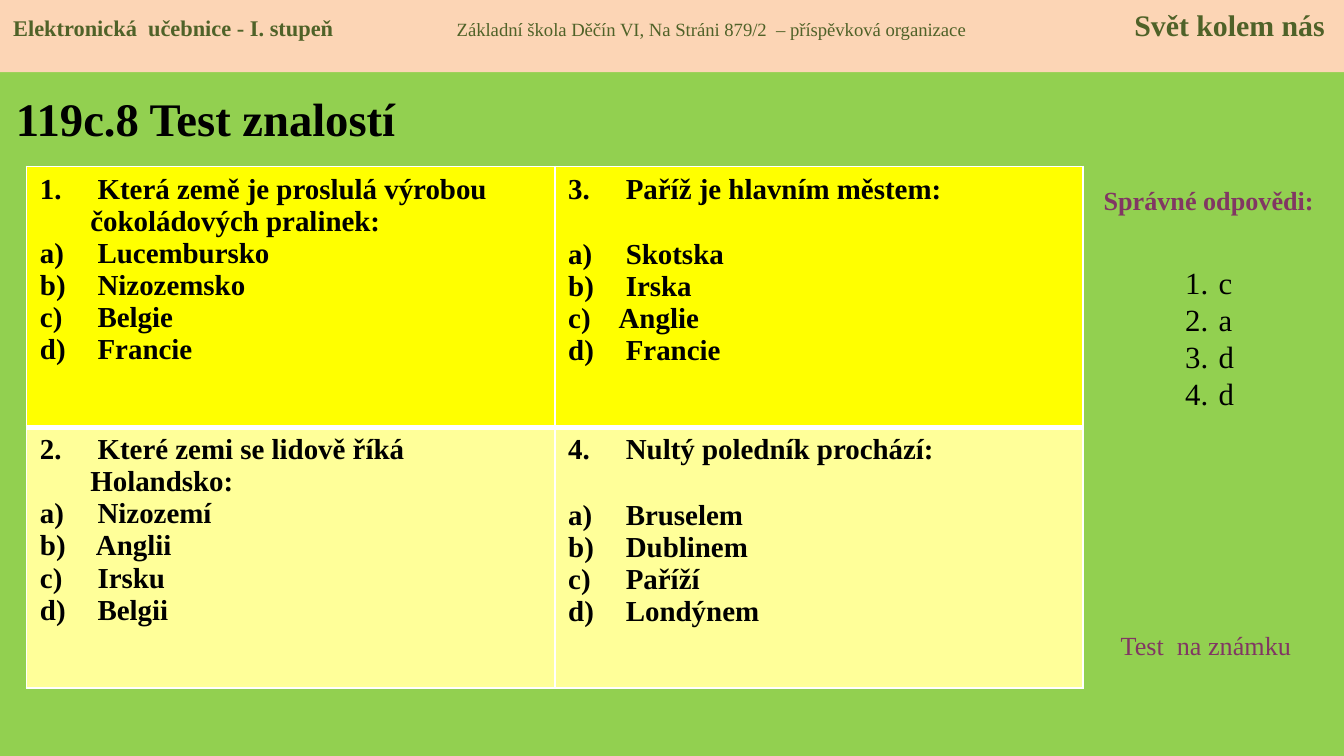
from pptx import Presentation
from pptx.dml.color import RGBColor
from pptx.enum.shapes import MSO_SHAPE
from pptx.enum.text import MSO_ANCHOR, PP_ALIGN
from pptx.oxml.xmlchemy import OxmlElement
from pptx.util import Pt

FONT = "Times New Roman"
COLORS = {
    "background": "92D050", "header": "FCD5B5", "header_text": "4F6228",
    "text": "000000", "accent": "813763", "border": "FFFFFF",
    "top_row": "FFFF00", "bottom_row": "FFFF99",
}

HEADER = [  # text, size, bold
    ("Elektronická  učebnice - I. stupeň", 12, True),
    ("Základní škola Děčín VI, Na Stráni 879/2  – příspěvková organizace", 10, False),
    ("Svět kolem nás", 16, True),
]
HEADER_TABS = [(237.6, "l"), (702.6, "r")]
TITLE = "119c.8 Test znalostí"
QUESTIONS = [  # number, question, options; numbered down the columns
    [(1, " Která země je proslulá výrobou čokoládových pralinek:",
      [" Lucembursko", " Nizozemsko", " Belgie", " Francie"]),
     (3, " Paříž je hlavním městem:",
      [" Skotska", " Irska", "Anglie", " Francie"])],
    [(2, " Které zemi se lidově říká Holandsko:",
      [" Nizozemí", " Anglii", " Irsku", " Belgii"]),
     (4, " Nultý poledník prochází:",
      [" Bruselem", " Dublinem", " Paříží", " Londýnem"])],
]
ANSWERS_HEADING = "Správné odpovědi:"
ANSWERS = ["c", "a", "d", "d"]
GRADE_NOTE = "Test  na známku"

COLUMN_WIDTH, ROW_HEIGHT = 283, 139.7
QUESTION_SIZE, QUESTION_INDENT = 15.5, 27
ONE_LINE_LIMIT = 30  # longer questions wrap onto the second line
LINE_GAP = 17.8


def rgb(name):
    return RGBColor.from_string(COLORS[name])


def style(font, size, color="text", bold=False):
    font.name, font.size, font.bold = FONT, Pt(size), bold
    font.color.rgb = rgb(color)


def add_child(parent, tag, **attributes):
    child = OxmlElement(tag)
    for key, value in attributes.items():
        child.set(key, str(value))
    parent.append(child)
    return child


def add_text(slide, box, text, size, color="text", bold=False,
             align=PP_ALIGN.LEFT, anchor=MSO_ANCHOR.TOP):
    frame = slide.shapes.add_textbox(*map(Pt, box)).text_frame
    frame.word_wrap, frame.vertical_anchor = True, anchor
    paragraph = frame.paragraphs[0]
    paragraph.text, paragraph.alignment = text, align
    style(paragraph.font, size, color, bold)


def write_numbered(frame, items, size, indent, bold=False):
    """Fill the frame with (text, numbering scheme, first number) items."""
    for i, (text, scheme, start) in enumerate(items):
        paragraph = frame.paragraphs[0] if i == 0 else frame.add_paragraph()
        paragraph.text = text
        properties = paragraph._p.get_or_add_pPr()
        properties.set("marL", str(Pt(indent)))
        properties.set("indent", str(-Pt(indent)))
        add_child(properties, "a:buFont", typeface=FONT)
        add_child(properties, "a:buAutoNum", type=scheme, startAt=start)
        style(paragraph.font, size, bold=bold)


def set_borders(cell, widths):
    """Draw borders; widths are left, right, top, bottom."""
    properties = cell._tc.get_or_add_tcPr()
    for side, width in zip("LRTB", widths):
        line = add_child(properties, f"a:ln{side}", w=Pt(width))
        fill = add_child(line, "a:solidFill")
        add_child(fill, "a:srgbClr", val=COLORS["border"])


def add_header(slide):
    bar = slide.shapes.add_shape(MSO_SHAPE.RECTANGLE, 0, 0, Pt(720), Pt(38.7))
    bar.shadow.inherit = False
    bar.fill.solid()
    bar.fill.fore_color.rgb = rgb("header")
    bar.line.fill.background()
    bar.text_frame.word_wrap = True
    bar.text_frame.vertical_anchor = MSO_ANCHOR.TOP
    paragraph = bar.text_frame.paragraphs[0]
    paragraph.alignment = PP_ALIGN.LEFT
    tabs = add_child(paragraph._p.get_or_add_pPr(), "a:tabLst")
    for position, align in HEADER_TABS:
        add_child(tabs, "a:tab", pos=Pt(position), algn=align)
    for i, (text, size, bold) in enumerate(HEADER):
        run = paragraph.add_run()
        run.text = "\t" + text if i else text
        style(run.font, size, "header_text", bold)


def add_questions(slide):
    table = slide.shapes.add_table(2, 2, Pt(14.2), Pt(89.2), Pt(2 * COLUMN_WIDTH),
                                   Pt(2 * ROW_HEIGHT)).table
    table.first_row = table.horz_banding = False
    for r, (row, fill) in enumerate(zip(QUESTIONS, ("top_row", "bottom_row"))):
        for c, (number, question, options) in enumerate(row):
            cell = table.cell(r, c)
            set_borders(cell, (1, 1, 3 if r else 1, 1 if r else 3))
            cell.fill.solid()
            cell.fill.fore_color.rgb = rgb(fill)
            items = [(question, "arabicPeriod", number)]
            items += [(option, "alphaLcParenR", 1) for option in options]
            write_numbered(cell.text_frame, items, QUESTION_SIZE, QUESTION_INDENT, True)
            if len(question) < ONE_LINE_LIMIT:
                cell.text_frame.paragraphs[0].space_after = Pt(LINE_GAP)


prs = Presentation()
prs.slide_width, prs.slide_height = Pt(720), Pt(405)
slide = prs.slides.add_slide(prs.slide_layouts[6])
slide.background.fill.solid()
slide.background.fill.fore_color.rgb = rgb("background")

add_text(slide, (1.5, 39.6, 230, 46.8), TITLE, 25, bold=True, anchor=MSO_ANCHOR.MIDDLE)
add_text(slide, (579.6, 95, 136, 24.5), ANSWERS_HEADING, 14, "accent", True, PP_ALIGN.CENTER)
add_questions(slide)
answers = slide.shapes.add_textbox(Pt(627.8), Pt(137.8), Pt(40), Pt(124)).text_frame
answers.word_wrap = True
write_numbered(answers, [(a, "arabicPeriod", 1) for a in ANSWERS], 16.5, 18)
add_text(slide, (593.3, 333.4, 113, 24.5), GRADE_NOTE, 14, "accent")
add_header(slide)
prs.save("out.pptx")
